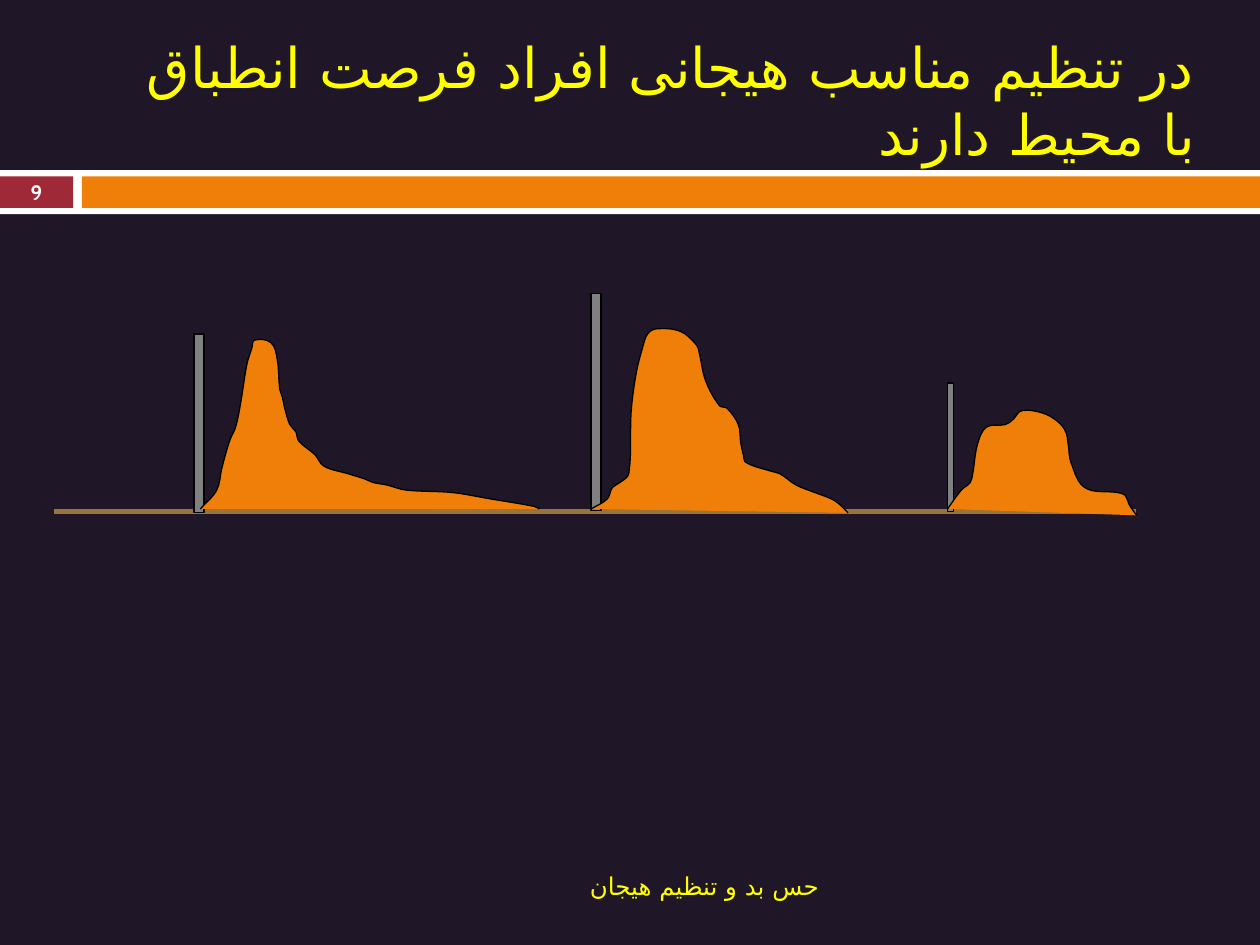
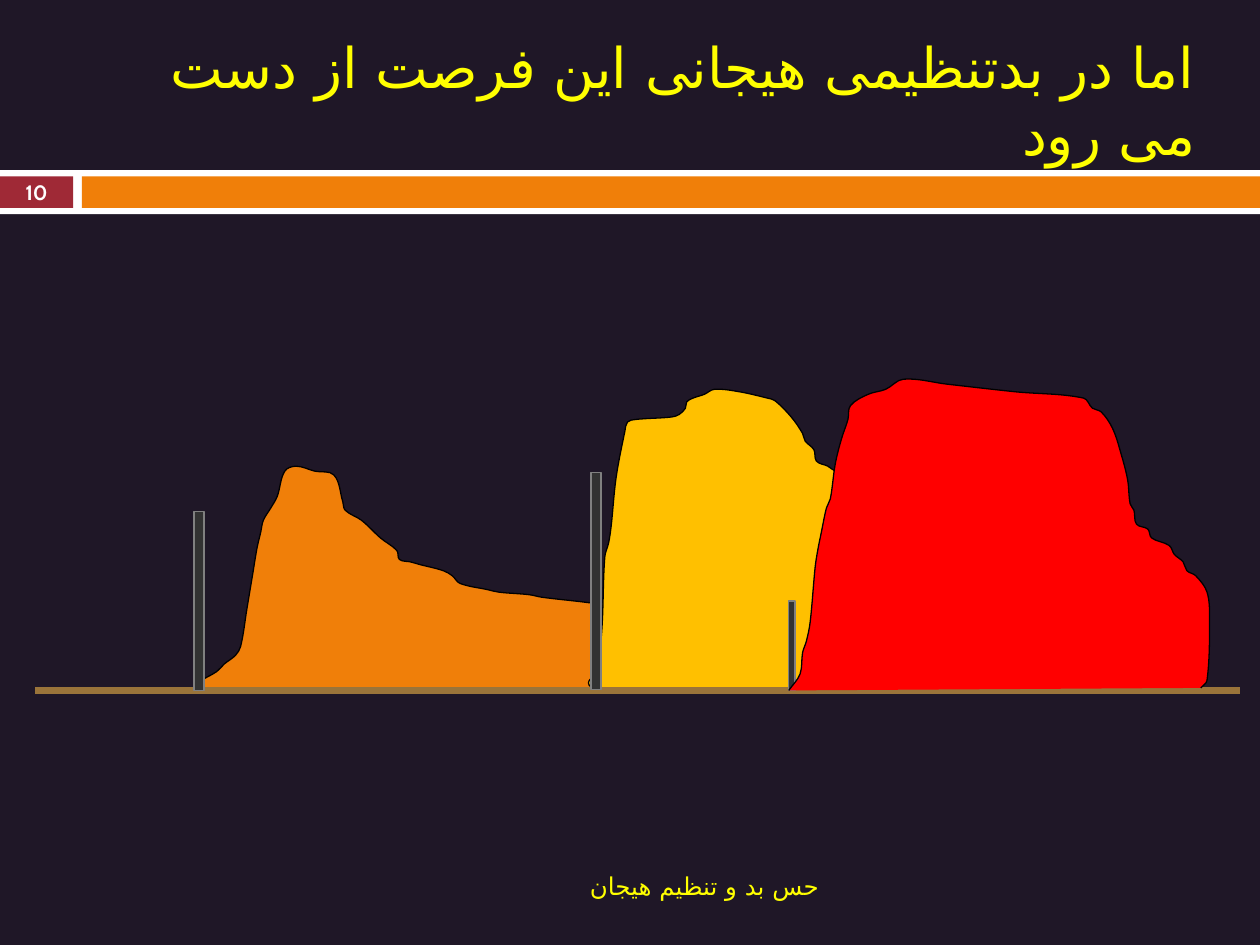
from math import hypot
from lxml import etree
from pptx import Presentation
from pptx.dml.color import RGBColor
from pptx.enum.shapes import MSO_CONNECTOR, MSO_SHAPE
from pptx.enum.text import MSO_ANCHOR, MSO_AUTO_SIZE, PP_ALIGN
from pptx.oxml.ns import qn
from pptx.util import Inches, Pt

RECTANGLE = MSO_SHAPE.RECTANGLE
STRAIGHT = MSO_CONNECTOR.STRAIGHT
MIDDLE = MSO_ANCHOR.MIDDLE
NO_FIT = MSO_AUTO_SIZE.NONE
RIGHT, CENTER = PP_ALIGN.RIGHT, PP_ALIGN.CENTER

FONT = "Cabin"
PERSIAN_FONT = "DejaVu Sans"
COLORS = {
    "background": "1F1727", "white": "FFFFFF", "number": "9F2936", "orange": "F07F09",
    "text": "FFFF00", "ground": "9A743A", "gray": "808080", "charcoal": "323232",
    "black": "000000", "amber": "FFC000", "red": "FF0000",
}
BANDS = [
    ((0, 1.35, 10, 0.35), "white"),
    ((0, 1.4, 0.58, 0.25), "number"),
    ((0.65, 1.4, 9.35, 0.25), "orange"),
]
TITLE_AREA = (0.67, 0.25, 8.92, 1.08)
FOOTER_AREA = (0.67, 6.83, 5.93, 0.4)
NUMBER_AREA = (0, 1.39, 0.58, 0.27)
FOOTER = "حس بد و تنظیم هیجان"

SHORT_CALM = [
    (1.59, 4.04), (1.72, 3.89), (1.76, 3.72), (1.8, 3.57), (1.83, 3.48), (1.87, 3.39),
    (1.91, 3.2), (1.96, 2.89), (2, 2.76), (2.02, 2.7), (2.15, 2.72), (2.2, 2.85),
    (2.22, 3.09), (2.24, 3.15), (2.26, 3.24), (2.3, 3.37), (2.35, 3.43), (2.37, 3.5),
    (2.5, 3.61), (2.57, 3.7), (2.76, 3.76), (2.89, 3.8), (2.96, 3.83), (3.07, 3.85),
    (3.22, 3.89), (3.59, 3.91), (3.89, 3.96), (4.24, 4.02), (4.28, 4.04),
]
TALL_CALM = [
    (4.69, 4.04), (4.82, 3.96), (4.86, 3.87), (4.92, 3.83), (4.99, 3.76), (5.01, 3.26),
    (5.05, 2.96), (5.1, 2.76), (5.14, 2.65), (5.21, 2.61), (5.4, 2.63), (5.53, 2.74),
    (5.55, 2.8), (5.6, 3.02), (5.71, 3.22), (5.77, 3.24), (5.86, 3.37), (5.88, 3.52),
    (5.9, 3.61), (5.92, 3.67), (6.12, 3.74), (6.19, 3.76), (6.32, 3.85), (6.47, 3.91),
    (6.6, 3.96), (6.66, 4), (6.73, 4.07),
]
LOW_CALM = [
    (7.52, 4.04), (7.63, 3.89), (7.7, 3.83), (7.72, 3.76), (7.76, 3.52), (7.83, 3.39),
    (7.98, 3.37), (8.04, 3.33), (8.11, 3.26), (8.28, 3.28), (8.4, 3.35), (8.46, 3.43),
    (8.48, 3.54), (8.5, 3.67), (8.61, 3.87), (8.87, 3.91), (8.93, 3.93), (8.96, 4),
    (9.02, 4.09),
]
FIRST_SURGE = [
    (1.54, 5.48), (1.57, 5.42), (1.72, 5.33), (1.78, 5.27), (1.87, 5.2), (1.91, 5.13),
    (1.96, 4.83), (2, 4.59), (2.04, 4.35), (2.07, 4.22), (2.09, 4.13), (2.15, 4.03),
    (2.2, 3.94), (2.26, 3.74), (2.35, 3.7), (2.5, 3.74), (2.65, 3.77), (2.72, 3.98),
    (2.74, 4.05), (2.87, 4.13), (3.02, 4.27), (3.15, 4.37), (3.17, 4.44), (3.26, 4.46),
    (3.33, 4.48), (3.52, 4.53), (3.59, 4.57), (3.65, 4.63), (3.87, 4.68), (3.96, 4.7),
    (4.2, 4.72), (4.3, 4.74), (4.72, 4.79), (4.78, 4.81), (4.96, 4.85), (5.11, 4.94),
    (5.2, 5.05), (5.48, 5.13), (5.85, 5.18), (6.07, 5.22), (6.35, 5.27), (6.54, 5.35),
    (6.67, 5.4), (6.72, 5.46),
]
SECOND_SURGE = [
    (4.72, 5.48), (4.67, 5.42), (4.72, 5.35), (4.76, 5.16), (4.78, 4.94), (4.8, 4.42),
    (4.83, 4.31), (4.85, 4.18), (4.89, 3.79), (4.96, 3.42), (4.98, 3.35), (5.04, 3.33),
    (5.33, 3.31), (5.39, 3.29), (5.44, 3.24), (5.45, 3.19), (5.5, 3.16), (5.59, 3.13),
    (5.67, 3.09), (5.87, 3.11), (6.09, 3.16), (6.15, 3.18), (6.28, 3.31), (6.37, 3.44),
    (6.39, 3.5), (6.46, 3.57), (6.48, 3.66), (6.57, 3.7), (6.63, 3.74), (6.74, 3.77),
    (7, 3.81), (7.13, 3.87), (7.24, 4.07), (7.41, 4.18), (7.98, 4.22), (8.3, 4.37),
    (8.46, 4.5), (8.54, 4.66), (8.74, 4.77), (8.85, 4.98), (9, 5.16), (9.17, 5.35),
    (9.37, 5.44), (9.48, 5.48),
]
THIRD_SURGE = [
    (6.26, 5.48), (6.35, 5.35), (6.37, 5.18), (6.4, 5.09), (6.43, 4.94), (6.47, 4.5),
    (6.49, 4.37), (6.52, 4.22), (6.56, 4.03), (6.59, 3.96), (6.63, 3.68), (6.68, 3.48),
    (6.73, 3.33), (6.75, 3.22), (6.89, 3.13), (7.03, 3.09), (7.17, 3.01), (7.52, 3.05),
    (8.06, 3.11), (8.6, 3.16), (8.67, 3.24), (8.74, 3.27), (8.83, 3.4), (8.9, 3.61),
    (8.95, 3.81), (8.97, 4), (9, 4.05), (9.02, 4.16), (9.11, 4.2), (9.14, 4.27),
    (9.28, 4.33), (9.32, 4.4), (9.39, 4.46), (9.42, 4.53), (9.49, 4.57), (9.58, 4.7),
    (9.6, 4.92), (9.58, 5.4), (9.53, 5.46),
]

PAGES = [
    {
        "number": "9",
        "title": "در تنظیم مناسب هیجانی افراد فرصت انطباق با محیط دارند",
        "post_colors": ("gray", "black"),
        "parts": [
            ("ground", (0.43, 9.02, 4.06, 3.25)),
            ("post", (1.54, 2.65, 0.08, 1.42)),
            ("wave", (SHORT_CALM, "orange")),
            ("post", (4.69, 2.33, 0.08, 1.72)),
            ("wave", (TALL_CALM, "orange")),
            ("post", (7.52, 3.04, 0.05, 1.02)),
            ("wave", (LOW_CALM, "orange")),
        ],
    },
    {
        "number": "10",
        "title": "اما در بدتنظیمی هیجانی این فرصت از دست می رود",
        "post_colors": ("charcoal", "gray"),
        "parts": [
            ("wave", (FIRST_SURGE, "orange")),
            ("wave", (SECOND_SURGE, "amber")),
            ("ground", (0.28, 9.84, 5.48, 3.5)),
            ("post", (1.54, 4.06, 0.08, 1.42)),
            ("post", (6.26, 4.77, 0.05, 0.71)),
            ("post", (4.69, 3.75, 0.08, 1.72)),
            ("wave", (THIRD_SURGE, "red")),
        ],
    },
]


def color(name):
    return RGBColor.from_string(COLORS[name])


def paint(shape, fill, line=None):
    shape.shadow.inherit = False
    shape.fill.solid()
    shape.fill.fore_color.rgb = color(fill)
    if line:
        shape.line.color.rgb = color(line)
        shape.line.width = Pt(0.75)
    else:
        shape.line.fill.background()


def add_rectangle(page, area, fill, line=None):
    shape = page.shapes.add_shape(RECTANGLE, *map(Inches, area))
    paint(shape, fill, line)
    return shape


def write(box, text, size, name, align, bold=False):
    frame = box.text_frame
    frame.text = text
    frame.word_wrap = True
    frame.auto_size = NO_FIT
    frame.vertical_anchor = MIDDLE
    para = frame.paragraphs[0]
    para.alignment = align
    span = para.runs[0]
    span.font.name, span.font.size, span.font.bold = FONT, Pt(size), bold
    span.font.color.rgb = color(name)
    etree.SubElement(span._r.get_or_add_rPr(), qn("a:cs"), typeface=PERSIAN_FONT)
    return para


def add_title(page, text):
    title = page.shapes.title
    title.left, title.top, title.width, title.height = map(Inches, TITLE_AREA)
    para = write(title, text, 32, "text", RIGHT)
    para._p.get_or_add_pPr().set("rtl", "1")


def add_label(page, area, *style):
    write(page.shapes.add_textbox(*map(Inches, area)), *style)


def add_ground(page, left, right, top, width):
    ground = page.shapes.add_connector(STRAIGHT, *map(Inches, (left, top, right, top)))
    ground.line.color.rgb = color("ground")
    ground.line.width = Pt(width)
    etree.SubElement(ground._element.spPr, qn("a:effectLst"))


def curve_points(points):
    ends = [points[0], *points, points[-1]]
    tangents = []
    for (x0, y0), (x1, y1) in zip(ends, ends[2:]):
        length = hypot(x1 - x0, y1 - y0)
        tangents.append(((x1 - x0) / length, (y1 - y0) / length))
    curve = []
    for (x0, y0), (x1, y1), leave, arrive in zip(points, points[1:], tangents, tangents[1:]):
        reach = hypot(x1 - x0, y1 - y0) / 3
        curve += [
            (x0 + reach * leave[0], y0 + reach * leave[1]),
            (x1 - reach * arrive[0], y1 - reach * arrive[1]),
            (x1, y1),
        ]
    return curve


def bend(shape):
    outline = next(shape._element.iter(qn("a:path")))
    lines = outline.findall(qn("a:lnTo"))
    for first in range(0, len(lines), 3):
        bezier = etree.SubElement(outline, qn("a:cubicBezTo"))
        for line in lines[first:first + 3]:
            bezier.append(line[0])
            outline.remove(line)


def add_wave(page, points, fill):
    start, *rest = [(Inches(x), Inches(y)) for x, y in [points[0], *curve_points(points)]]
    builder = page.shapes.build_freeform(*start)
    builder.add_line_segments(rest, close=False)
    wave = builder.convert_to_shape()
    bend(wave)
    paint(wave, fill, "black")


def add_parts(page, parts, post_colors):
    for kind, values in parts:
        if kind == "ground":
            add_ground(page, *values)
        elif kind == "post":
            add_rectangle(page, values, *post_colors)
        else:
            add_wave(page, *values)


def set_up_layout(layout, page):
    layout.background.fill.solid()
    layout.background.fill.fore_color.rgb = color("background")
    for area, fill in BANDS:
        band = add_rectangle(page, area, fill)
        layout.shapes._spTree.append(band._element)


def main():
    deck = Presentation()
    deck.slide_width, deck.slide_height = Inches(10), Inches(7.5)
    layout = deck.slide_layouts[5]
    for index, content in enumerate(PAGES):
        page = deck.slides.add_slide(layout)
        if index == 0:
            set_up_layout(layout, page)
        add_title(page, content["title"])
        add_label(page, FOOTER_AREA, FOOTER, 14, "text", RIGHT)
        add_label(page, NUMBER_AREA, content["number"], 11.9, "white", CENTER, True)
        add_parts(page, content["parts"], content["post_colors"])
    deck.save("out.pptx")


if __name__ == "__main__":
    main()
